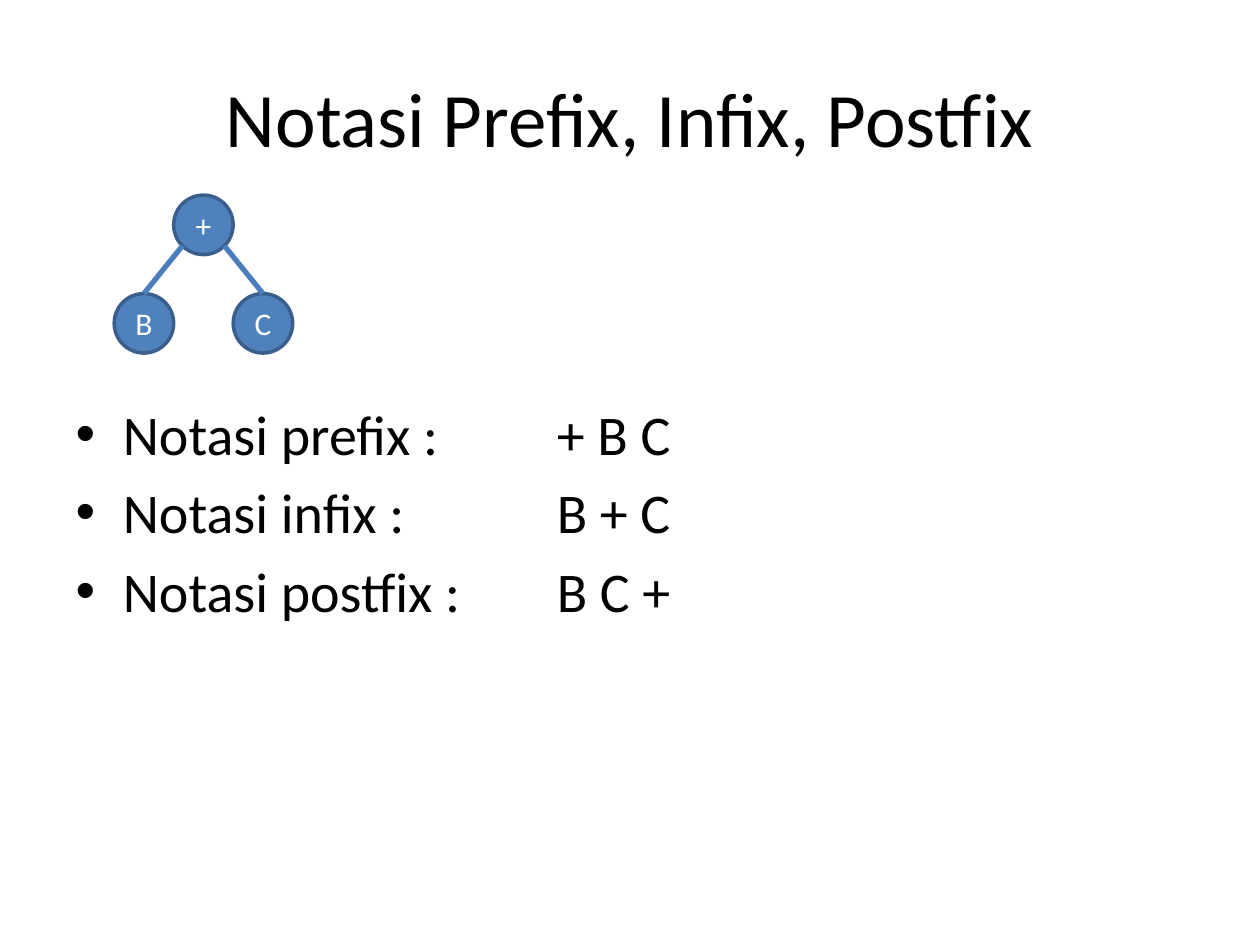
from dataclasses import dataclass
from math import sqrt

from lxml.etree import SubElement
from pptx import Presentation
from pptx.dml.color import RGBColor
from pptx.enum.shapes import MSO_CONNECTOR, MSO_SHAPE
from pptx.enum.text import MSO_ANCHOR, PP_ALIGN
from pptx.oxml.ns import qn
from pptx.shapes.shapetree import GroupShapes
from pptx.text.text import _Paragraph
from pptx.util import Pt

FONT = "Calibri"
DIAMETER = 34
RADIUS = DIAMETER / 2
TAB_STOP = 275


@dataclass
class Node:
    """A tree node, placed by its centre in points."""
    label: str
    x: float
    y: float


@dataclass
class Notation:
    name: str
    expression: str


ROOT = Node("+", 116.25, 128.5)
CHILDREN = [Node(label, ROOT.x + side * DIAMETER, ROOT.y + 56.25)
            for label, side in (("B", -1), ("C", 1))]
NOTATIONS = [
    Notation("Notasi prefix :", "+ B C"),
    Notation("Notasi infix :", "B + C"),
    Notation("Notasi postfix :", "B C +"),
]


def rgb(color: str) -> RGBColor:
    return RGBColor.from_string(color)


def add_run(p: _Paragraph, text: str, size: float, color: str) -> None:
    r = p.add_run()
    r.text = text
    r.font.name = FONT
    r.font.size = Pt(size)
    r.font.color.rgb = rgb(color)


def place(sp, left: float, top: float, width: float, height: float) -> None:
    sp.left, sp.top, sp.width, sp.height = map(Pt, (left, top, width, height))


def add_tab_stop(p: _Paragraph, position: float) -> None:
    tabs = SubElement(p._p.get_or_add_pPr(), qn("a:tabLst"))
    SubElement(tabs, qn("a:tab"), pos=str(Pt(position)), algn="l")


def add_node(shapes: GroupShapes, node: Node) -> None:
    sp = shapes.add_shape(MSO_SHAPE.OVAL, Pt(node.x - RADIUS), Pt(node.y - RADIUS),
                          Pt(DIAMETER), Pt(DIAMETER))
    sp.shadow.inherit = False
    sp.fill.solid()
    sp.fill.fore_color.rgb = rgb("4F81BD")
    sp.line.color.rgb = rgb("3A5F8C")
    sp.line.width = Pt(2)
    tf = sp.text_frame
    tf.vertical_anchor = MSO_ANCHOR.MIDDLE
    p = tf.paragraphs[0]
    p.alignment = PP_ALIGN.CENTER
    add_run(p, node.label, 18, "FFFFFF")


def add_edge(shapes: GroupShapes, parent: Node, child: Node) -> None:
    """Join the child's top to the parent's lower diagonal point."""
    diagonal = RADIUS / sqrt(2)
    side = 1 if child.x > parent.x else -1
    line = shapes.add_connector(
        MSO_CONNECTOR.STRAIGHT, Pt(child.x), Pt(child.y - RADIUS),
        Pt(parent.x + side * diagonal), Pt(parent.y + diagonal))
    line.line.color.rgb = rgb("4B7EBC")
    line.line.width = Pt(3)
    SubElement(line._element.spPr, qn("a:effectLst"))


def main() -> None:
    prs = Presentation()
    prs.slide_width, prs.slide_height = Pt(720), Pt(540)
    s = prs.slides.add_slide(prs.slide_layouts[1])
    s.background.fill.solid()
    s.background.fill.fore_color.rgb = rgb("FFFFFF")

    title = s.shapes.title
    place(title, 36, 21.6, 648, 90)
    title.text_frame.vertical_anchor = MSO_ANCHOR.MIDDLE
    p = title.text_frame.paragraphs[0]
    p.alignment = PP_ALIGN.CENTER
    add_run(p, "Notasi Prefix, Infix, Postfix", 44, "000000")

    body = s.placeholders[1]
    place(body, 36, 224.6, 648, 257.8)
    tf = body.text_frame
    for i, notation in enumerate(NOTATIONS):
        p = tf.add_paragraph() if i else tf.paragraphs[0]
        add_tab_stop(p, TAB_STOP)
        p.space_before = Pt(6.4 if i else 0)
        add_run(p, f"{notation.name}\t{notation.expression}", 32, "000000")

    tree = s.shapes.add_group_shape().shapes
    for node in (ROOT, *CHILDREN):
        add_node(tree, node)
    for child in CHILDREN:
        add_edge(tree, ROOT, child)

    prs.save("out.pptx")


if __name__ == "__main__":
    main()
